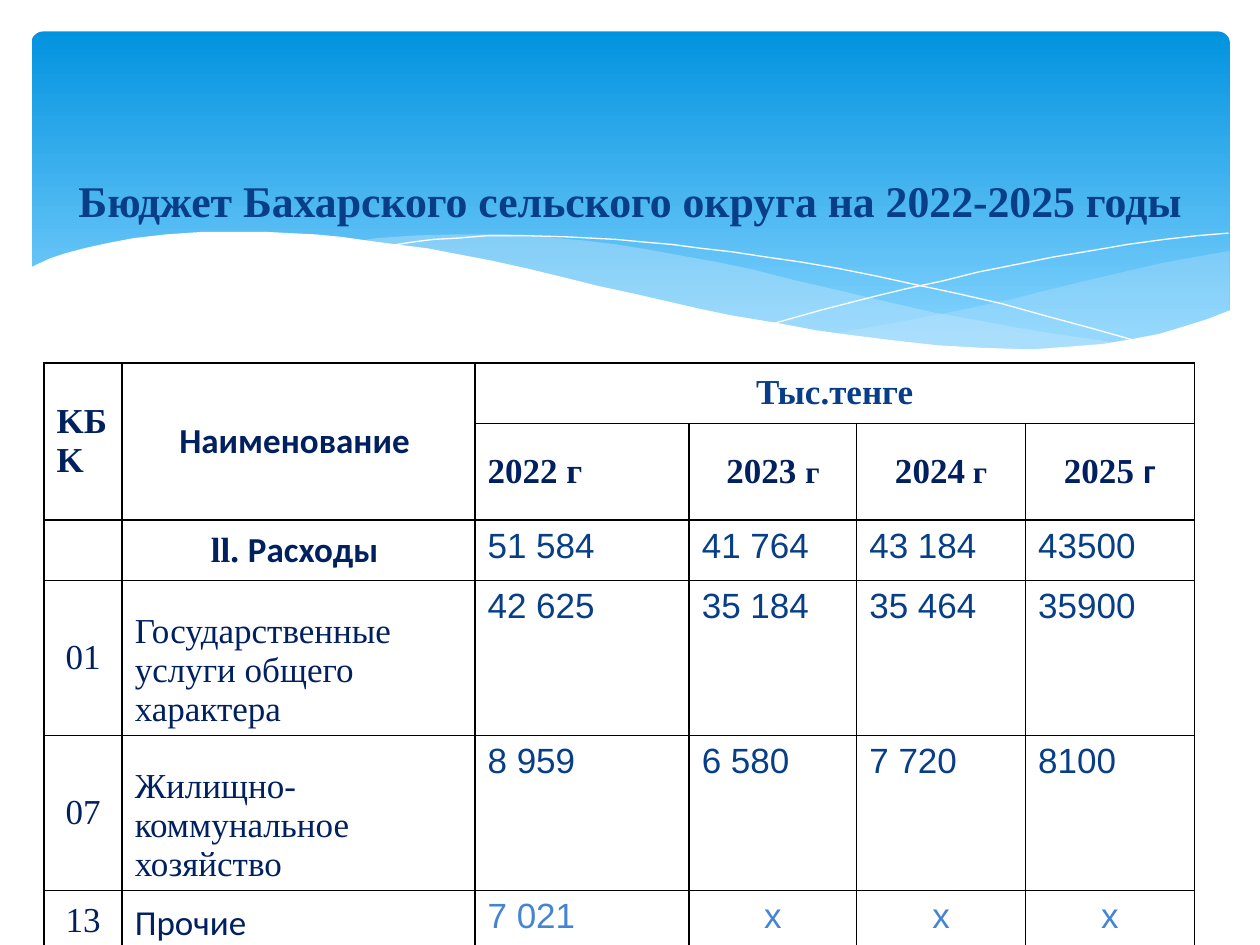
from lxml import etree
from pptx import Presentation
from pptx.dml.color import RGBColor
from pptx.enum import shapes, text
from pptx.oxml import ns
from pptx.util import Inches, Pt

SERIF, SANS, CALIBRI = "Times New Roman", "Arial", "Calibri"
NAVY, BLUE, LIGHT = "002060", "073E87", "4584D3"
CENTER, LEFT = text.PP_ALIGN.CENTER, text.PP_ALIGN.LEFT
TOP, MIDDLE, BOTTOM = text.MSO_ANCHOR.TOP, text.MSO_ANCHOR.MIDDLE, text.MSO_ANCHOR.BOTTOM


def color(value):
    return RGBColor.from_string(value)


def write(frame, spans, align, anchor):
    frame.word_wrap = True
    frame.vertical_anchor = anchor
    para = frame.paragraphs[0]
    para.alignment = align
    for wording, size, font, ink, bold in spans:
        span = para.add_run()
        span.text = wording
        span.font.size = Pt(size)
        span.font.name = font
        span.font.color.rgb = color(ink)
        span.font.bold = bold


deck = Presentation()
deck.slide_width, deck.slide_height = Inches(10), Inches(7.5)
page = deck.slides.add_slide(deck.slide_layouts[6])

banner = page.shapes.add_shape(
    shapes.MSO_SHAPE.ROUNDED_RECTANGLE, Inches(0.25), Inches(0.25), Inches(9.51), Inches(2.7))
banner.adjustments[0] = 0.034
banner.shadow.inherit = False
banner.line.fill.background()
banner.fill.gradient()
banner.fill.gradient_angle = 270
for stop, (position, shade) in zip(banner.fill.gradient_stops, [(0, "0293E0"), (0.9, "83D3FE")]):
    stop.position = position
    stop.color.rgb = color(shade)

right_swell = [
    (9.76, 1.99), (9.48, 2.04), (9.21, 2.09), (8.91, 2.16), (8.61, 2.23), (8.32, 2.3), (8.05, 2.37),
    (7.53, 2.48), (7.06, 2.57), (6.61, 2.65), (6.91, 2.69), (7.18, 2.72), (7.45, 2.75), (7.69, 2.77),
    (8.03, 2.78), (8.35, 2.77), (8.63, 2.75), (8.89, 2.72), (9.13, 2.67), (9.35, 2.61), (9.49, 2.57),
    (9.63, 2.52), (9.76, 2.47)]
middle_swell = [
    (8.93, 2.73), (8.66, 2.69), (8.37, 2.65), (8.07, 2.6), (7.75, 2.54), (7.41, 2.48), (7.06, 2.4),
    (6.68, 2.31), (6.29, 2.22), (5.98, 2.14), (5.69, 2.08), (5.41, 2.03), (5.14, 1.98), (4.89, 1.94),
    (4.65, 1.91), (4.42, 1.89), (4.2, 1.87), (3.99, 1.86), (3.61, 1.86), (3.28, 1.87), (2.99, 1.89),
    (2.86, 1.91), (3.23, 1.96), (3.62, 2.03), (4.04, 2.11), (4.49, 2.22), (4.91, 2.32), (5.3, 2.4),
    (5.66, 2.48), (6.01, 2.55), (6.34, 2.61), (6.65, 2.66), (6.95, 2.7), (7.22, 2.74), (7.48, 2.76),
    (7.85, 2.78), (8.28, 2.78), (8.57, 2.77), (8.76, 2.75)]
falling_line = [
    (3.09, 1.95), (3.28, 1.92), (3.44, 1.9), (3.63, 1.89), (3.87, 1.87), (4.16, 1.87), (4.5, 1.88),
    (4.89, 1.9), (5.1, 1.92), (5.33, 1.94), (5.56, 1.97), (5.82, 2), (6.08, 2.04), (6.36, 2.08),
    (6.65, 2.13), (6.95, 2.19), (7.27, 2.26), (7.6, 2.33), (7.95, 2.41), (8.31, 2.51), (8.68, 2.61),
    (9.07, 2.72)]
rising_line = [
    (6.13, 2.57), (6.52, 2.46), (6.95, 2.35), (7.2, 2.29), (7.48, 2.23), (7.76, 2.16), (8.06, 2.1),
    (8.36, 2.04), (8.66, 1.99), (8.95, 1.94), (9.24, 1.9), (9.51, 1.87), (9.75, 1.85)]
white_wave = [
    (9.77, 2.46), (9.59, 2.53), (9.4, 2.59), (9.2, 2.65), (8.99, 2.69), (8.75, 2.73), (8.5, 2.75),
    (8.23, 2.77), (8.09, 2.77), (7.78, 2.76), (7.44, 2.74), (7.08, 2.7), (6.68, 2.65), (6.47, 2.62),
    (6.26, 2.58), (6.03, 2.54), (5.79, 2.5), (5.55, 2.45), (5.29, 2.39), (5.03, 2.33), (4.75, 2.27),
    (4.47, 2.2), (4.18, 2.13), (3.91, 2.07), (3.65, 2.02), (3.39, 1.97), (3.15, 1.94), (2.92, 1.91),
    (2.71, 1.88), (2.5, 1.86), (2.3, 1.85), (2.11, 1.84), (1.61, 1.84), (1.32, 1.86), (1.06, 1.89),
    (0.85, 1.93), (0.67, 1.97), (0.52, 2.01), (0.4, 2.05), (0.29, 2.1), (0.23, 2.13), (0.23, 3.29),
    (9.77, 3.29)]

for points, shade, opacity in [
        (right_swell, "C6E7FC", 29), (middle_swell, "C6E7FC", 40),
        (falling_line, None, 100), (rising_line, None, 100), (white_wave, "FFFFFF", 100)]:
    corners = [(Inches(x), Inches(y)) for x, y in points]
    builder = page.shapes.build_freeform(*corners[0])
    builder.add_line_segments(corners[1:], close=shade is not None)
    wave = builder.convert_to_shape()
    wave.shadow.inherit = False
    if shade:
        wave.line.fill.background()
        wave.fill.solid()
        wave.fill.fore_color.rgb = color(shade)
        if opacity < 100:
            tint = wave.fill._xPr.find(".//" + ns.qn("a:srgbClr"))
            etree.SubElement(tint, ns.qn("a:alpha"), val=str(opacity * 1000))
    else:
        wave.fill.background()
        wave.line.color.rgb = color("FFFFFF")
        wave.line.width = Pt(0)

title = page.shapes.add_textbox(Inches(0.5), Inches(0.76), Inches(9), Inches(1.65))
write(title.text_frame,
      [("Бюджет Бахарского сельского округа на 2022-2025 годы", 25, SERIF, BLUE, True)],
      CENTER, MIDDLE)

widths = [0.62, 2.8, 1.7, 1.33, 1.34, 1.34]
heights = [0.48, 0.71, 0.48, 1.23, 1.23, 0.48]
budget = page.shapes.add_table(
    len(heights), len(widths), Inches(0.35), Inches(2.88), Inches(9.13), Inches(4.61)).table
budget.first_row = budget.horz_banding = False
for column, width in zip(budget.columns, widths):
    column.width = Inches(width)
for row, height in zip(budget.rows, heights):
    row.height = Inches(height)

for cell in budget.iter_cells():
    properties = cell._tc.get_or_add_tcPr()
    for side in ("lnL", "lnR", "lnT", "lnB"):
        border = etree.SubElement(properties, ns.qn("a:" + side), w=str(Pt(1)))
        paint = etree.SubElement(border, ns.qn("a:solidFill"))
        etree.SubElement(paint, ns.qn("a:srgbClr"), val="000000")
    cell.fill.solid()
    cell.fill.fore_color.rgb = color("FFFFFF")

for first, last in [((0, 0), (1, 0)), ((0, 1), (1, 1)), ((0, 2), (0, 5))]:
    budget.cell(*first).merge(budget.cell(*last))

headings = [
    (0, 0, LEFT, [("KБK", 20, SERIF, NAVY, True)]),
    (0, 1, CENTER, [("Наименование ", 20, CALIBRI, NAVY, True)]),
    (0, 2, CENTER, [("Тыс.тенге", 20, SERIF, BLUE, True)]),
    (1, 2, LEFT, [("2022 г", 20, SERIF, NAVY, True)]),
    (1, 3, CENTER, [("2023 ", 20, SERIF, NAVY, True), ("г", 18, SERIF, NAVY, True)]),
    (1, 4, CENTER, [("2024", 20, SERIF, NAVY, True), (" г", 18, SERIF, NAVY, True)]),
    (1, 5, CENTER, [("2025", 20, SERIF, NAVY, True), (" г", 18, SANS, NAVY, True)]),
    (2, 1, CENTER, [("ll. ", 20, SERIF, NAVY, True), ("Расходы ", 20, CALIBRI, NAVY, True)]),
]
for row, column, align, spans in headings:
    write(budget.cell(row, column).text_frame, spans, align, MIDDLE)
    budget.cell(row, column).vertical_anchor = MIDDLE

expenses = [
    ("", "", SERIF, BLUE, ["51 584", "41 764", "43 184", "43500"]),
    ("01", "Государственные услуги общего характера", SERIF, BLUE,
     ["42 625", "35 184", "35 464", "35900"]),
    ("07", "Жилищно-коммунальное хозяйство", SERIF, BLUE, ["8 959", "6 580", "7 720", "8100"]),
    ("13", "Прочие", CALIBRI, LIGHT, ["7 021", "х", "х", "х"]),
]
for row, (code, name, font, ink, amounts) in enumerate(expenses, 2):
    entries = [(0, code, SERIF, NAVY, CENTER, MIDDLE), (1, name, font, NAVY, LEFT, BOTTOM)]
    entries += [(column, amount, SANS, ink, CENTER if amount == "х" else LEFT, TOP)
                for column, amount in enumerate(amounts, 2)]
    for column, wording, face, shade, align, anchor in entries:
        if wording:
            cell = budget.cell(row, column)
            write(cell.text_frame, [(wording, 20, face, shade, False)], align, anchor)
            cell.vertical_anchor = anchor

deck.save("out.pptx")
